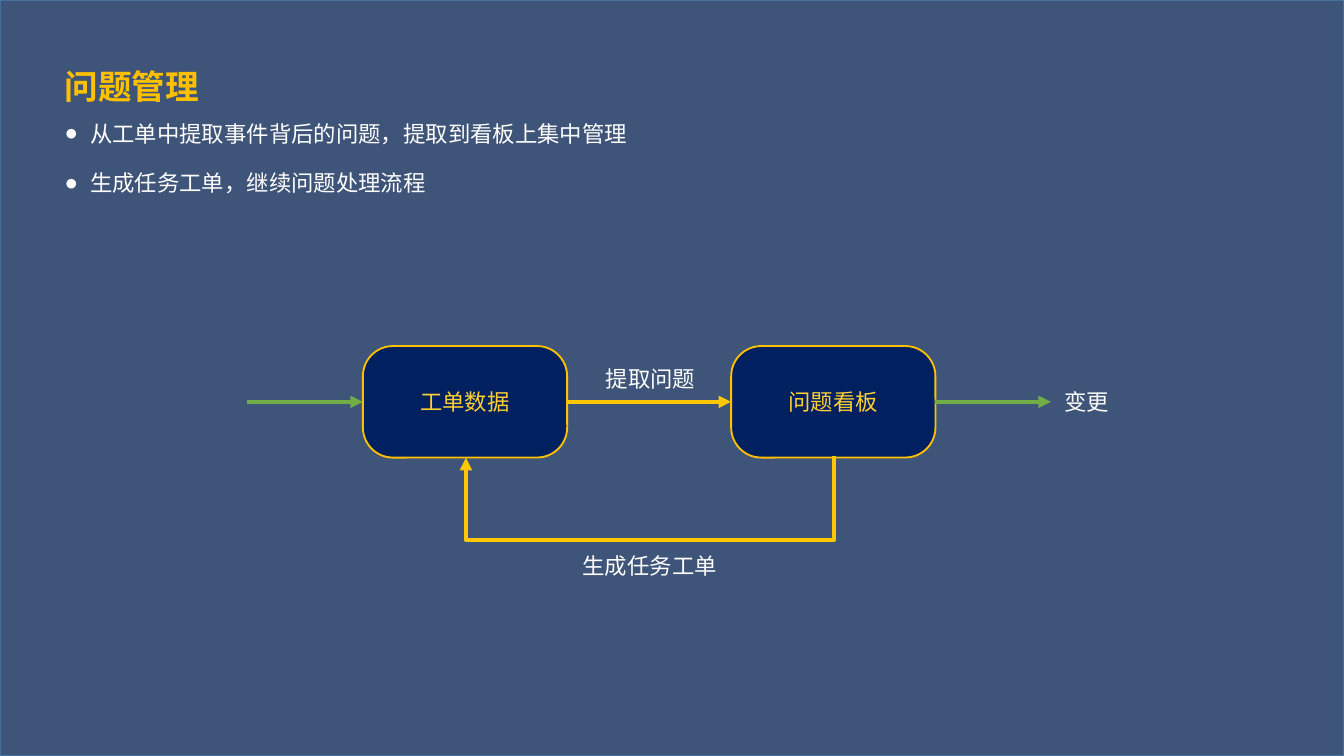
"""Build the problem management slide."""
import dataclasses

import pptx
import pptx.dml.color
import pptx.enum.shapes
import pptx.enum.text
import pptx.oxml
import pptx.oxml.ns
import pptx.util

Inches = pptx.util.Inches
Pt = pptx.util.Pt
Kind = pptx.enum.shapes.MSO_SHAPE
Link = pptx.enum.shapes.MSO_CONNECTOR
Align = pptx.enum.text.PP_ALIGN
Anchor = pptx.enum.text.MSO_ANCHOR
Fit = pptx.enum.text.MSO_AUTO_SIZE


@dataclasses.dataclass(frozen=True)
class Theme:
    """Colours, font and type sizes of the slide."""
    back: str = "203864"
    frame: str = "43739E"
    gold: str = "FFC000"
    loop: str = "FFC803"
    pale: str = "FFCE33"
    navy: str = "002060"
    green: str = "70AD47"
    white: str = "FFFFFF"
    font: str = "Noto Sans CJK SC"
    head: float = 18
    text: float = 12


THEME = Theme()
AXIS = 2.99


def rgb(code):
    """Turn a hex code into a colour."""
    return pptx.dml.color.RGBColor.from_string(code)


def add_xml(parent, tag, **attrs):
    """Append a drawing element to its parent."""
    node = pptx.oxml.parse_xml(f"<a:{tag} {pptx.oxml.ns.nsdecls('a')}/>")
    for key, value in attrs.items():
        node.set(key, str(value))
    parent.append(node)
    return node


def add_run(para, text, color, size=THEME.text, bold=False):
    """Add one styled run to a paragraph."""
    run = para.add_run()
    run.text = text
    run.font.size = Pt(size)
    run.font.bold = bold
    run.font.color.rgb = rgb(color)
    run.font.name = THEME.font
    add_xml(run.font._element, "ea", typeface=THEME.font)


def place(shape, left, top, width, height):
    """Set the place and size of a shape."""
    shape.left, shape.top = Inches(left), Inches(top)
    shape.width, shape.height = Inches(width), Inches(height)


def set_frame(shape, anchor, wrap=True):
    """Set up the text frame of a shape and return it."""
    frame = shape.text_frame
    frame.word_wrap = wrap
    frame.auto_size = Fit.NONE
    frame.vertical_anchor = anchor
    return frame


def paint(shape, fill, line):
    """Give a shape a plain fill and a thin outline."""
    shape.shadow.inherit = False
    shape.fill.solid()
    shape.fill.fore_color.rgb = rgb(fill)
    shape.line.color.rgb = rgb(line)
    shape.line.width = Pt(1)


def add_back(slide, width, height):
    """Lay the tinted panel behind everything."""
    panel = slide.shapes.add_shape(Kind.RECTANGLE, 0, 0, width, height)
    paint(panel, THEME.back, THEME.frame)
    tint = panel._element.spPr.find(".//" + pptx.oxml.ns.qn("a:srgbClr"))
    add_xml(tint, "alpha", val=86000)
    panel._element.getparent().insert(2, panel._element)


def add_title(slide, text):
    """Fill the title placeholder."""
    title = slide.shapes.title
    place(title, 0.38, 0.44, 3.36, 0.4)
    para = set_frame(title, Anchor.MIDDLE).paragraphs[0]
    para.alignment = Align.LEFT
    add_run(para, text, THEME.gold, THEME.head, True)


def add_list(slide, items):
    """Fill the body placeholder with bullets."""
    body = slide.placeholders[1]
    place(body, 0.38, 0.84, 6.58, 0.67)
    frame = set_frame(body, Anchor.TOP)
    for index, item in enumerate(items):
        para = frame.add_paragraph() if index else frame.paragraphs[0]
        props = para._p.get_or_add_pPr()
        props.set("marL", str(Inches(0.19)))
        props.set("indent", str(-Inches(0.19)))
        add_xml(props, "buChar", char="●")
        para.line_spacing = Pt(1.2 * THEME.text)
        para.space_before = Pt(6 if index else 0)
        para.space_after = Pt(6)
        add_run(para, item, THEME.white)


def add_box(slide, left, text):
    """Add a rounded box with centred text on the axis."""
    width, height = 1.52, 0.83
    box = slide.shapes.add_shape(
        Kind.ROUNDED_RECTANGLE, Inches(left), Inches(AXIS - height / 2),
        Inches(width), Inches(height))
    box.adjustments[0] = 0.27
    paint(box, THEME.navy, THEME.gold)
    para = set_frame(box, Anchor.MIDDLE).paragraphs[0]
    para.alignment = Align.CENTER
    add_run(para, text, THEME.pale)
    return box


def add_label(slide, left, top, width, text, align=Align.CENTER):
    """Add a one-line label."""
    label = slide.shapes.add_textbox(
        Inches(left), Inches(top), Inches(width), Inches(0.3))
    para = set_frame(label, Anchor.MIDDLE, False).paragraphs[0]
    para.alignment = align
    add_run(para, text, THEME.white)


def add_arrow(slide, color, start, end, first=None, last=None, kind=Link.STRAIGHT):
    """Add an arrow, joined to (box, side) pairs where given."""
    y = Inches(AXIS)
    arrow = slide.shapes.add_connector(kind, Inches(start), y, Inches(end), y)
    if first:
        arrow.begin_connect(*first)
    if last:
        arrow.end_connect(*last)
    arrow.line.color.rgb = rgb(color)
    arrow.line.width = Pt(2.25)
    add_xml(arrow.line._get_or_add_ln(), "tailEnd", type="triangle")
    add_xml(arrow._element.spPr, "effectLst")
    return arrow


def add_loop(slide, first, last):
    """Add the arrow that runs below the boxes and back."""
    loop = add_arrow(slide, THEME.loop, 6.21, 3.47, (first, 2), (last, 2), Link.ELBOW)
    props = loop._element.spPr
    frame = props.find(pptx.oxml.ns.qn("a:xfrm"))
    for flip in ("flipH", "flipV"):
        frame.attrib.pop(flip, None)
    frame.set("rot", "5400000")
    place(loop, 4.83, 2.03, 0.01, 2.74)
    loop.width = Pt(1)
    guides = props.find(".//" + pptx.oxml.ns.qn("a:avLst"))
    add_xml(guides, "gd", name="adj1", fmla="val 4531000")


def main():
    """Build and save the slide."""
    deck = pptx.Presentation()
    deck.slide_width, deck.slide_height = Inches(10), Inches(10 * 9 / 16)
    slide = deck.slides.add_slide(deck.slide_layouts[1])
    add_back(slide, deck.slide_width, deck.slide_height)
    add_title(slide, "问题管理")
    add_list(slide, ["从工单中提取事件背后的问题，提取到看板上集中管理",
                     "生成任务工单，继续问题处理流程"])
    data = add_box(slide, 2.7, "工单数据")
    board = add_box(slide, 5.44, "问题看板")
    add_arrow(slide, THEME.green, 1.84, 2.7, last=(data, 1))
    add_arrow(slide, THEME.loop, 4.22, 5.44, (data, 3), (board, 1))
    add_loop(slide, board, data)
    add_arrow(slide, THEME.green, 6.96, 7.82, first=(board, 3))
    add_label(slide, 4.23, 4.06, 1.21, "生成任务工单")
    add_label(slide, 4.4, 2.67, 0.88, "提取问题")
    add_label(slide, 7.82, 2.84, 0.54, "变更", Align.LEFT)
    deck.save("out.pptx")


if __name__ == "__main__":
    main()
